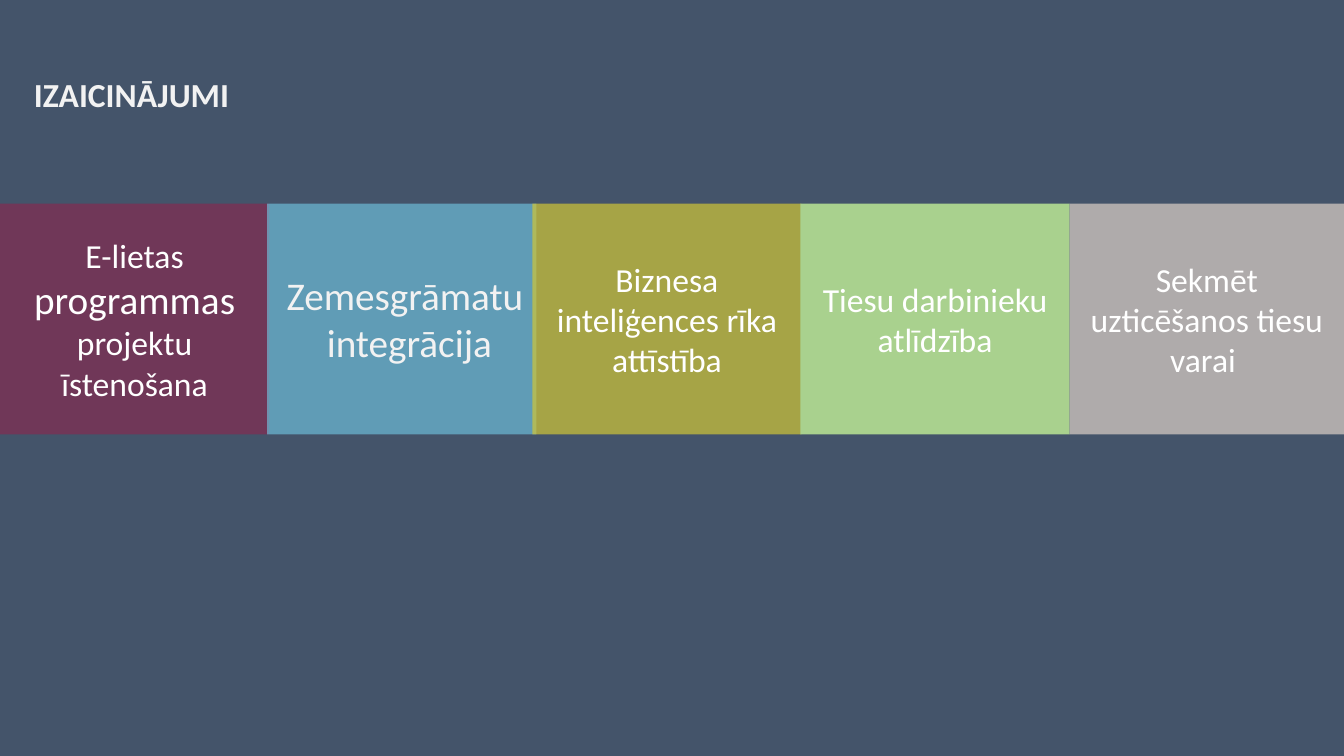
from pptx import Presentation
from pptx import util as u
from pptx.dml.color import RGBColor
from pptx.enum import shapes, text
from pptx.oxml.ns import qn
from lxml import etree

SLIDE_W, SLIDE_H = u.Inches(13.33), u.Inches(7.5)
FONT = "Calibri"
WHITE, PALE = "FFFFFF", "F2F2F2"

# Lengths are percentages of the slide's width and height
BAND_TOP, BAND_HEIGHT = 26.93, 30.53

# left, width, colour, opacity, text pieces with their sizes
CHALLENGES = [
    (0, 20.03, "8E254D", 60,
     [("E-lietas ", 24), ("programmas", 28), (" projektu īstenošana", 24)]),
    (19.88, 20.03, "73CDE9", 60, []),
    (39.61, 20.03, "D1C637", 70, [("Biznesa inteliģences rīka attīstība", 24)]),
    (59.56, 20.03, "A9D18E", 100, [("Tiesu darbinieku atlīdzība", 24)]),
    (79.59, 20.41, "AFABAB", 100, [("Sekmēt uzticēšanos tiesu varai ", 24)]),
]


def rgb(value):
    return RGBColor.from_string(value)


def area(left, top, width, height):
    return [round(share * side / 100) for share, side in
            zip((left, top, width, height), (SLIDE_W, SLIDE_H) * 2)]


def style(run, size, color, bold=False):
    run.font.name = FONT
    run.font.size = u.Pt(size)
    run.font.color.rgb = rgb(color)
    run.font.bold = bold


def add_tile(slide, left, width, color, opacity, pieces):
    tile = slide.shapes.add_shape(shapes.MSO_SHAPE.RECTANGLE,
                                  *area(left, BAND_TOP, width, BAND_HEIGHT))
    tile.shadow.inherit = False
    tile.line.fill.background()
    tile.fill.solid()
    tile.fill.fore_color.rgb = rgb(color)
    if opacity < 100:
        tint = tile.fill._xPr.find(".//" + qn("a:srgbClr"))
        etree.SubElement(tint, qn("a:alpha")).set("val", str(opacity * 1000))
    frame = tile.text_frame
    frame.word_wrap = True
    frame.vertical_anchor = text.MSO_ANCHOR.MIDDLE
    paragraph = frame.paragraphs[0]
    paragraph.alignment = text.PP_ALIGN.CENTER
    for words, size in pieces:
        run = paragraph.add_run()
        run.text = words
        style(run, size, WHITE)


def add_label(slide, place, words, size, bold=False, wrap=True):
    frame = slide.shapes.add_textbox(*area(*place)).text_frame
    frame.word_wrap = wrap
    frame.auto_size = text.MSO_AUTO_SIZE.SHAPE_TO_FIT_TEXT
    frame.text = words
    for paragraph in frame.paragraphs:
        paragraph.alignment = text.PP_ALIGN.CENTER
        for run in paragraph.runs:
            style(run, size, PALE, bold)


def main():
    deck = Presentation()
    deck.slide_width, deck.slide_height = SLIDE_W, SLIDE_H
    slide = deck.slides.add_slide(deck.slide_layouts[6])
    slide.background.fill.solid()
    slide.background.fill.fore_color.rgb = rgb("44546A")

    # Heading
    add_label(slide, (-2.48, 9.07, 24.53, 6.67), "IZAICINĀJUMI", 24, bold=True)

    # Band of challenges
    for challenge in CHALLENGES:
        add_tile(slide, *challenge)

    # Label over the second tile
    add_label(slide, (20.48, 35.2, 19.95, 13.87), "Zemesgrāmatu \nintegrācija",
              28, wrap=False)

    deck.save("out.pptx")


if __name__ == "__main__":
    main()
